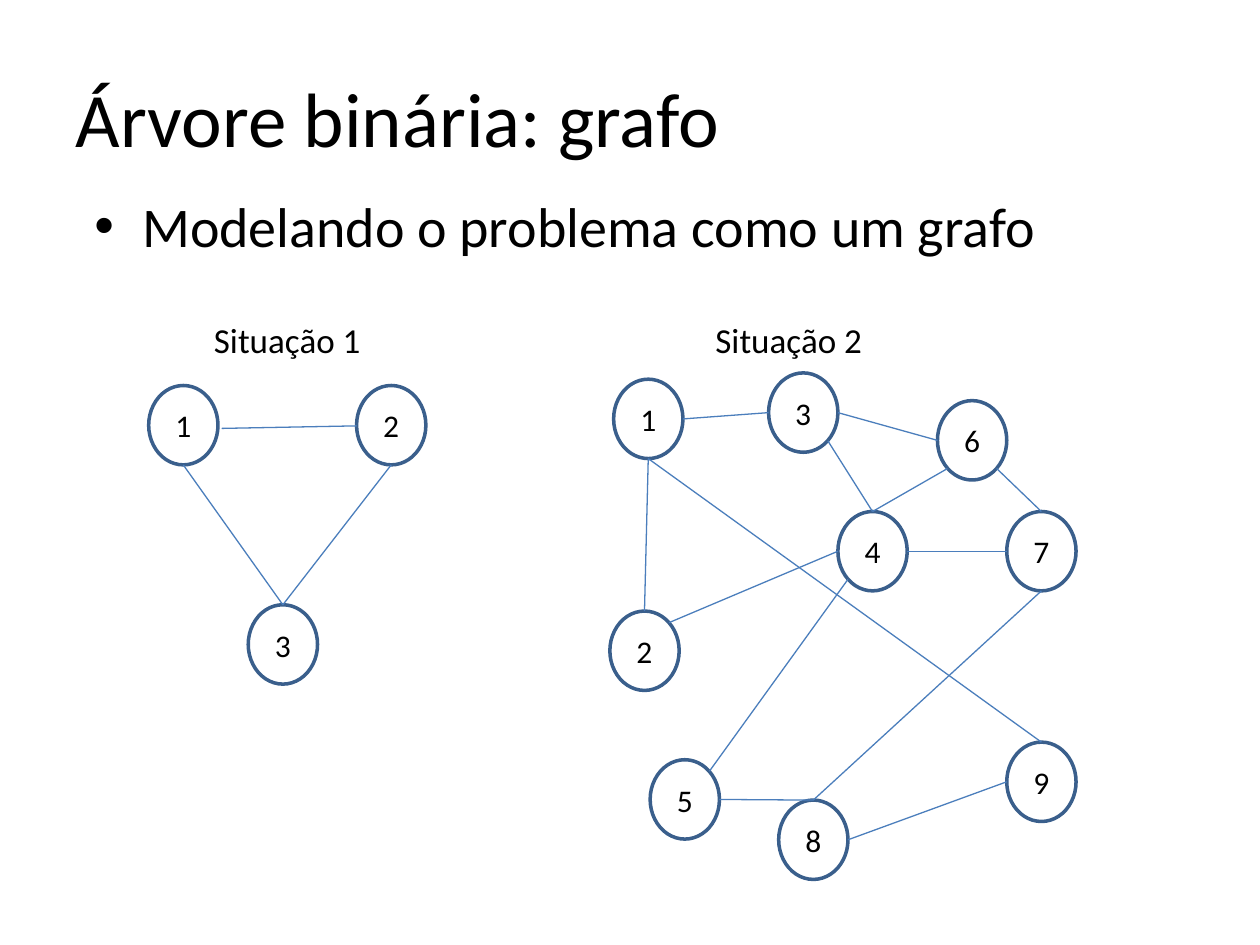
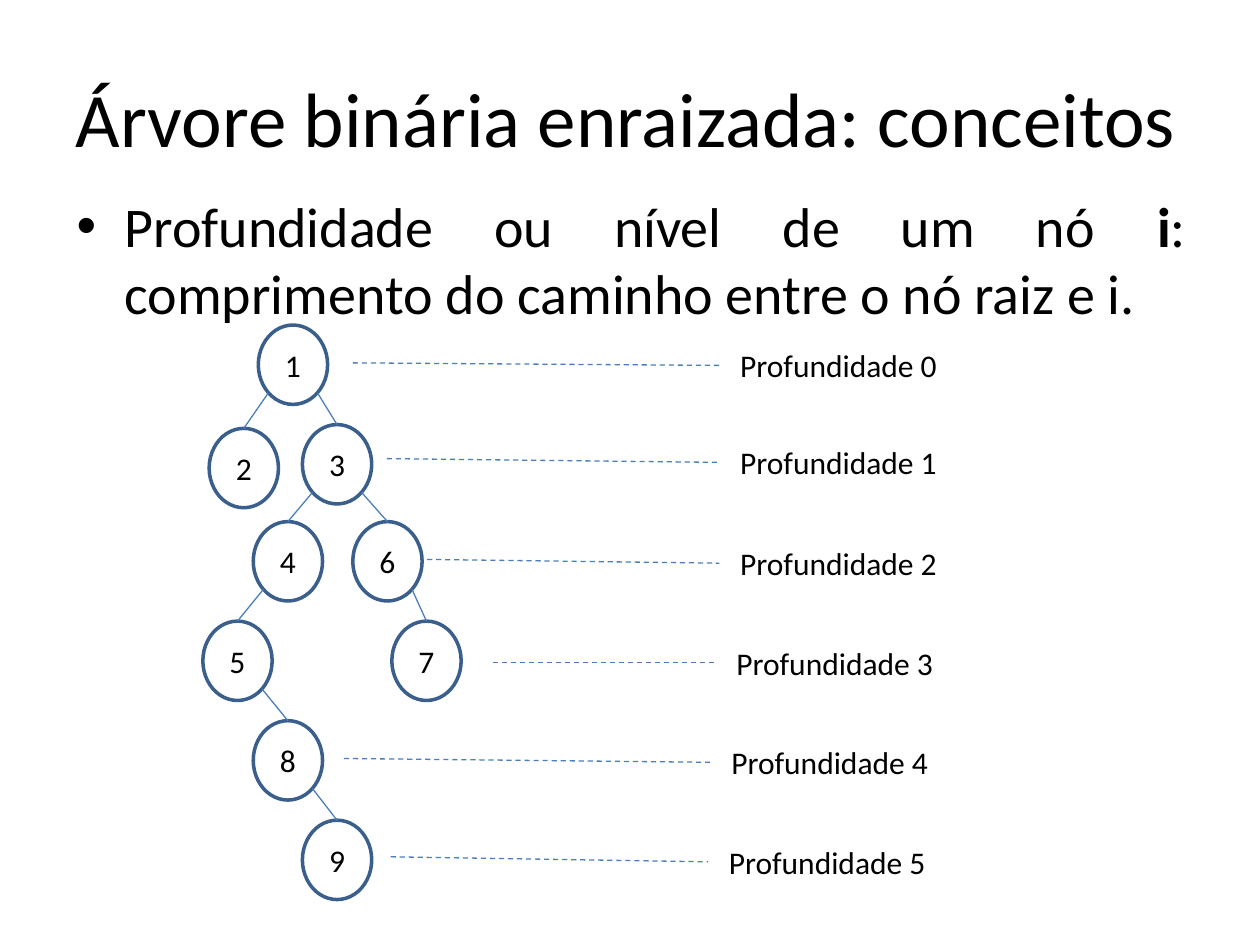
from lxml import etree
from pptx import Presentation
from pptx.dml.color import RGBColor
from pptx.enum.dml import MSO_LINE
from pptx.enum.shapes import MSO_CONNECTOR, MSO_SHAPE
from pptx.enum.text import MSO_ANCHOR, PP_ALIGN
from pptx.oxml.ns import qn
from pptx.util import Inches, Pt

BLACK = RGBColor(0x00, 0x00, 0x00)
WHITE = RGBColor(0xFF, 0xFF, 0xFF)
NODE_BLUE = RGBColor(0x3A, 0x5F, 0x8C)
EDGE_BLUE = RGBColor(0x4B, 0x7E, 0xBC)
FONT = "Calibri"
OVAL, STRAIGHT, DASH = MSO_SHAPE.OVAL, MSO_CONNECTOR.STRAIGHT, MSO_LINE.DASH
LEFT_AL, CENTER, JUSTIFY = PP_ALIGN.LEFT, PP_ALIGN.CENTER, PP_ALIGN.JUSTIFY
MIDDLE, UPPER = MSO_ANCHOR.MIDDLE, MSO_ANCHOR.TOP

COLS, ROWS = 100, 75
NODE_W, NODE_H = 5.5, 6.3
LABEL_W, LABEL_H = 31.5, 5.4
DIAG = 0.71
TOP, BOTTOM, LEFT, RIGHT = (0, -1), (0, 1), (-1, 0), (1, 0)
TOP_RIGHT, LOW_LEFT, LOW_RIGHT = (DIAG, -DIAG), (-DIAG, DIAG), (DIAG, DIAG)

TRIANGLE_NODES = {1: (11.8, 30.6), 2: (28.3, 30.6), 3: (19.7, 48)}
TRIANGLE_EDGES = [(1, BOTTOM, 3, TOP), (2, BOTTOM, 3, TOP)]

NETWORK_NODES = {
    1: (48.7, 30.1), 4: (66.5, 40.6), 2: (48.4, 48.5), 3: (61, 29.6), 5: (51.6, 60.3),
    9: (79.9, 58.9), 6: (74.4, 31.8), 7: (79.9, 40.6), 8: (61.8, 63.5),
}
NETWORK_EDGES = [
    (1, RIGHT, 3, LEFT), (1, BOTTOM, 9, TOP), (3, LOW_RIGHT, 4, TOP), (3, RIGHT, 6, LEFT),
    (4, RIGHT, 7, LEFT), (6, LOW_LEFT, 4, TOP), (6, LOW_RIGHT, 7, TOP), (7, BOTTOM, 8, TOP),
    (5, RIGHT, 8, TOP), (1, BOTTOM, 2, TOP), (4, LOW_LEFT, 5, TOP_RIGHT),
    (4, LEFT, 2, TOP_RIGHT), (9, LEFT, 8, RIGHT),
]

TREE_NODES = {
    1: (20.5, 25.8), 4: (20.1, 41.4), 2: (16.6, 34), 3: (24, 33.7), 5: (16.1, 49.3),
    9: (24, 65.1), 6: (28, 41.4), 7: (31.1, 49.3), 8: (20.1, 57.2),
}
LEFT_CHILDREN = [(1, 2), (3, 4), (4, 5)]
RIGHT_CHILDREN = [(1, 3), (3, 6), (6, 7), (5, 8), (8, 9)]
TREE_EDGES = ([(a, LOW_LEFT, b, TOP) for a, b in LEFT_CHILDREN]
              + [(a, LOW_RIGHT, b, TOP) for a, b in RIGHT_CHILDREN])

DEPTHS = [
    (50.8, 26.3, 28, 28.8), (50.8, 34, 30.7, 36.4), (50.8, 42, 33.9, 44.4),
    (50.5, 49.9, 39.1, 52.6), (50.1, 57.8, 27.3, 60.2), (49.9, 65.7, 31, 68),
]


class Deck:
    """Shared style, the current slide and one method per kind of element."""

    def __init__(self):
        self.prs = Presentation()
        self.prs.slide_width, self.prs.slide_height = Inches(10), Inches(7.5)
        self.col = self.prs.slide_width / COLS
        self.row = self.prs.slide_height / ROWS

    def xy(self, x, y):
        """Turn columns and rows into lengths."""
        return round(x * self.col), round(y * self.row)

    def fill_text(self, shape, runs, size, align=CENTER, anchor=MIDDLE):
        """Fill a shape with one paragraph of (text, bold) runs."""
        tf = shape.text_frame
        tf.word_wrap = True
        tf.vertical_anchor = anchor
        p = tf.paragraphs[0]
        p.alignment = align
        for text, bold in runs:
            r = p.add_run()
            r.text = text
            r.font.name, r.font.size, r.font.bold = FONT, Pt(size), bold
            r.font.color.rgb = BLACK
        return p

    def slide(self, title):
        """Start a title-only slide."""
        s = self.prs.slides.add_slide(self.prs.slide_layouts[5])
        s.background.fill.solid()
        s.background.fill.fore_color.rgb = WHITE
        self.shapes = s.shapes
        ph = s.shapes.title
        ph.left, ph.top = self.xy(5, 3)
        ph.width, ph.height = self.xy(90, 12.5)
        self.fill_text(ph, [(title, False)], 44, LEFT_AL)

    def text(self, x, y, w, h, runs, size, align=CENTER, anchor=MIDDLE):
        """Add a text box."""
        box = self.shapes.add_textbox(*self.xy(x, y), *self.xy(w, h))
        return self.fill_text(box, runs, size, align, anchor)

    def bullet(self, x, h, runs):
        """Add the justified bullet under the title."""
        p = self.text(x, 14.7, 90, h, runs, 32, JUSTIFY, UPPER)
        pPr = p._p.get_or_add_pPr()
        pPr.set("marL", str(Inches(0.38)))
        pPr.set("indent", str(-Inches(0.38)))
        before = etree.SubElement(pPr, qn("a:spcBef"))
        etree.SubElement(before, qn("a:spcPct")).set("val", "20000")
        etree.SubElement(pPr, qn("a:buFont")).set("typeface", "Arial")
        etree.SubElement(pPr, qn("a:buChar")).set("char", "•")

    def line(self, start, end, dash=None, shapes=None):
        """Add a thin straight line."""
        shapes = shapes or self.shapes
        c = shapes.add_connector(STRAIGHT, *self.xy(*start), *self.xy(*end))
        c.line.color.rgb, c.line.width = EDGE_BLUE, Pt(0.75)
        if dash:
            c.line.dash_style = dash
        etree.SubElement(c._element.spPr, qn("a:effectLst"))
        return c

    def node(self, shapes, x, y, number):
        """Add a numbered node."""
        sp = shapes.add_shape(OVAL, *self.xy(x, y), *self.xy(NODE_W, NODE_H))
        sp.shadow.inherit = False
        sp.fill.background()
        sp.line.color.rgb, sp.line.width = NODE_BLUE, Pt(2)
        tf = sp.text_frame
        tf.margin_left = tf.margin_right = tf.margin_top = tf.margin_bottom = 0
        self.fill_text(sp, [(str(number), False)], 18)
        return sp

    def graph(self, nodes, edges, grouped=True):
        """Add nodes and the edges between points on their outlines."""
        shapes = self.shapes.add_group_shape().shapes if grouped else self.shapes
        ovals = {n: self.node(shapes, x, y, n) for n, (x, y) in nodes.items()}

        def point(n, side):
            x, y = nodes[n]
            return x + NODE_W / 2 * (1 + side[0]), y + NODE_H / 2 * (1 + side[1])

        for a, a_side, b, b_side in edges:
            c = self.line(point(a, a_side), point(b, b_side), shapes=shapes)
            if b_side == TOP:
                c.end_connect(ovals[b], 0)
        return shapes


def graph_slide(deck):
    """Build the slide with the two graphs."""
    deck.slide("Árvore binária: grafo")
    deck.bullet(6.5, 8.7, [("Modelando o problema como um grafo", False)])
    triangle = deck.graph(TRIANGLE_NODES, TRIANGLE_EDGES)
    deck.line((17.6, 34), (28.3, 33.8), shapes=triangle)
    deck.graph(NETWORK_NODES, NETWORK_EDGES)
    for i, x in enumerate((11.8, 51.6), 1):
        deck.text(x, 23.3, 22, 7.3, [(f"Situação {i}", False)], 20)


def depth_slide(deck):
    """Build the slide with the rooted tree and its depths."""
    deck.slide("Árvore binária enraizada: conceitos")
    deck.bullet(5.1, 11.8, [
        ("Profundidade ou nível de um nó ", False), ("i", True),
        (": comprimento do caminho entre o nó raiz e i.", False),
    ])
    deck.graph(TREE_NODES, TREE_EDGES, grouped=False)
    for depth, (x, y, line_x, line_y) in enumerate(DEPTHS):
        deck.text(x, y, LABEL_W, LABEL_H, [(f"Profundidade {depth}", False)], 18)
        deck.line((line_x, line_y), (x + LABEL_W / 5, y + LABEL_H / 2), DASH)


def main():
    """Build and save the deck."""
    deck = Deck()
    graph_slide(deck)
    depth_slide(deck)
    deck.prs.save("out.pptx")


if __name__ == "__main__":
    main()
